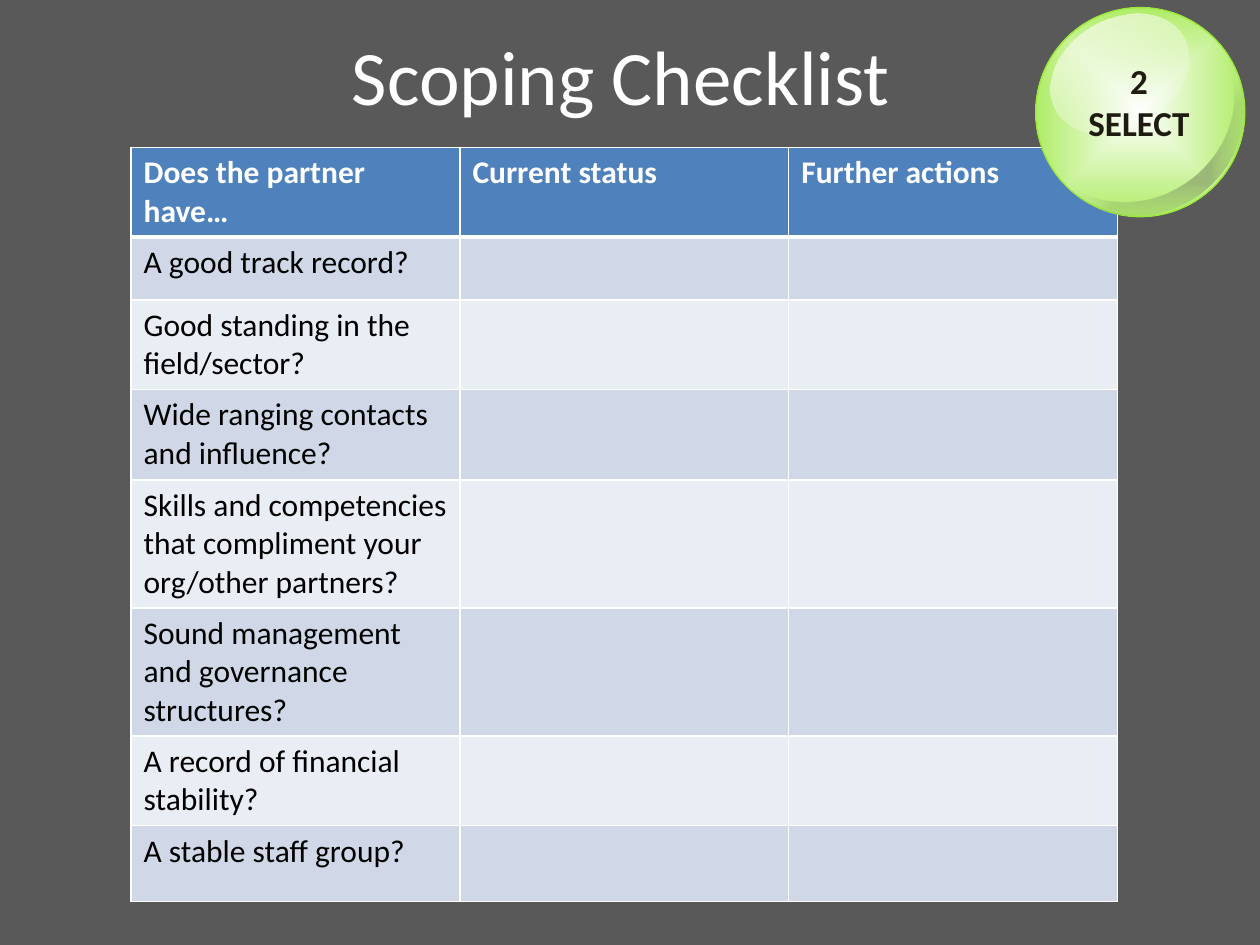
from dataclasses import dataclass

from lxml import etree
from pptx import Presentation
from pptx.dml.color import RGBColor
from pptx.enum.shapes import MSO_SHAPE
from pptx.enum.text import MSO_ANCHOR, MSO_AUTO_SIZE, PP_ALIGN
from pptx.oxml.ns import qn
from pptx.util import Inches, Pt

ELLIPSE, MOON = MSO_SHAPE.OVAL, MSO_SHAPE.MOON
CENTER, MIDDLE = PP_ALIGN.CENTER, MSO_ANCHOR.MIDDLE
GROW = MSO_AUTO_SIZE.SHAPE_TO_FIT_TEXT


@dataclass(frozen=True)
class Theme:
    font: str = "Calibri"
    background: str = "595959"
    white: str = "FFFFFF"
    black: str = "000000"
    header: str = "4F81BD"
    bands: tuple = ("D0D8E8", "E9EDF4")
    badge: str = "98E739"
    badge_text: str = "1E1C11"
    gloss: str = "FFFCF9"
    title_size: int = 44
    badge_size: int = 20
    table_size: int = 18


THEME = Theme()
HEADINGS = ["Does the partner have…", "Current status", "Further actions"]
QUESTIONS = [
    "A good track record?",
    "Good standing in the field/sector?",
    "Wide ranging contacts and influence?",
    "Skills and competencies that compliment your org/other partners?",
    "Sound management and governance structures?",
    "A record of financial stability?",
    "A stable staff group?",
]
ROW_HEIGHTS = [0.53, 0.5, 0.67, 0.72, 0.9, 0.9, 0.67, 0.6]
COLUMN_WIDTH = 2.61


def rgb(color):
    return RGBColor.from_string(color)


def style_text(frame, size, color, bold=False, align=None):
    for paragraph in frame.paragraphs:
        paragraph.alignment = align
        font = paragraph.font
        for target in [font] + [run.font for run in paragraph.runs]:
            target.name = THEME.font
            target.size = Pt(size)
            target.bold = bold
            target.color.rgb = rgb(color)


def add_color(parent, color, opacity=100):
    element = etree.SubElement(parent, qn("a:srgbClr"), val=color)
    if opacity < 100:
        etree.SubElement(element, qn("a:alpha"), val=str(opacity * 1000))


def set_borders(cell, top, bottom):
    properties = cell._tc.get_or_add_tcPr()
    widths = {"a:lnL": 1, "a:lnR": 1, "a:lnT": top, "a:lnB": bottom}
    for position, (tag, width) in enumerate(widths.items()):
        line = etree.Element(qn(tag), w=str(Pt(width)))
        add_color(etree.SubElement(line, qn("a:solidFill")), THEME.white)
        properties.insert(position, line)


def set_gradient(shape, stops, radial):
    """Fill with (position, color, opacity) stops, from the centre or downwards."""
    gradient = etree.Element(qn("a:gradFill"), rotWithShape="1")
    stop_list = etree.SubElement(gradient, qn("a:gsLst"))
    for position, color, opacity in stops:
        stop = etree.SubElement(stop_list, qn("a:gs"), pos=str(position * 1000))
        add_color(stop, color, opacity)
    if radial:
        shading = etree.SubElement(gradient, qn("a:path"), path="shape")
        etree.SubElement(shading, qn("a:fillToRect"),
                         {side: "50000" for side in "ltrb"})
    else:
        etree.SubElement(gradient, qn("a:lin"), ang="5400000", scaled="1")
    shape.fill.background()
    properties = shape._element.spPr
    properties.replace(properties.find(qn("a:noFill")), gradient)


def add_badge_part(group, kind, box, rotation, stops, radial=True):
    part = group.shapes.add_shape(kind, *map(Inches, box))
    part.rotation = rotation
    part._element.spPr.xfrm.set("flipH", "1")
    part.shadow.inherit = False
    part.line.fill.background()
    set_gradient(part, stops, radial)
    return part


def add_text(shapes, box, text, size, color, bold=False):
    frame = shapes.add_textbox(*map(Inches, box)).text_frame
    frame.word_wrap = True
    frame.text = text
    style_text(frame, size, color, bold, CENTER)
    return frame


def add_checklist(slide):
    rows = [HEADINGS] + [[question, "", ""] for question in QUESTIONS]
    table = slide.shapes.add_table(
        len(rows), len(HEADINGS), Inches(1.04), Inches(1.17),
        Inches(COLUMN_WIDTH * len(HEADINGS)), Inches(sum(ROW_HEIGHTS))).table
    for column in table.columns:
        column.width = Inches(COLUMN_WIDTH)
    for r, (texts, height) in enumerate(zip(rows, ROW_HEIGHTS)):
        table.rows[r].height = Inches(height)
        is_header = r == 0
        fill = THEME.header if is_header else THEME.bands[(r - 1) % 2]
        color = THEME.white if is_header else THEME.black
        for c, text in enumerate(texts):
            cell = table.cell(r, c)
            cell.text = text
            style_text(cell.text_frame, THEME.table_size, color, is_header)
            cell.fill.solid()
            cell.fill.fore_color.rgb = rgb(fill)
            set_borders(cell, top=3 if r == 1 else 1, bottom=3 if is_header else 1)


def add_badge(slide):
    group = slide.shapes.add_group_shape()
    ball = add_badge_part(group, ELLIPSE, (8.22, 0.06, 1.66, 1.66), 338.6,
                          [(0, THEME.white, 100), (100, THEME.badge, 100)])
    ball.line.color.rgb = rgb(THEME.badge)
    ball.line.width = Pt(0.75)
    shade = add_badge_part(group, MOON, (8.94, 0.44, 0.73, 1.61), 53.6,
                           [(24, THEME.black, 24), (100, THEME.white, 0)])
    shade.adjustments[0] = 0.19
    add_badge_part(group, ELLIPSE, (8.3, 0.15, 1.17, 0.87), 329.4,
                   [(0, THEME.gloss, 77), (100, THEME.white, 0)], radial=False)
    label = add_text(group.shapes, (8.25, 0.42, 1.58, 1.08), "2\nSELECT",
                     THEME.badge_size, THEME.badge_text, bold=True)
    label.auto_size = GROW


def main():
    presentation = Presentation()
    presentation.slide_width, presentation.slide_height = Inches(10), Inches(7.5)
    slide = presentation.slides.add_slide(presentation.slide_layouts[6])
    slide.background.fill.solid()
    slide.background.fill.fore_color.rgb = rgb(THEME.background)
    add_checklist(slide)
    add_badge(slide)
    title = add_text(slide.shapes, (0.68, -0.21, 8.5, 1.61), "Scoping Checklist",
                     THEME.title_size, THEME.white)
    title.vertical_anchor = MIDDLE
    presentation.save("out.pptx")


if __name__ == "__main__":
    main()
